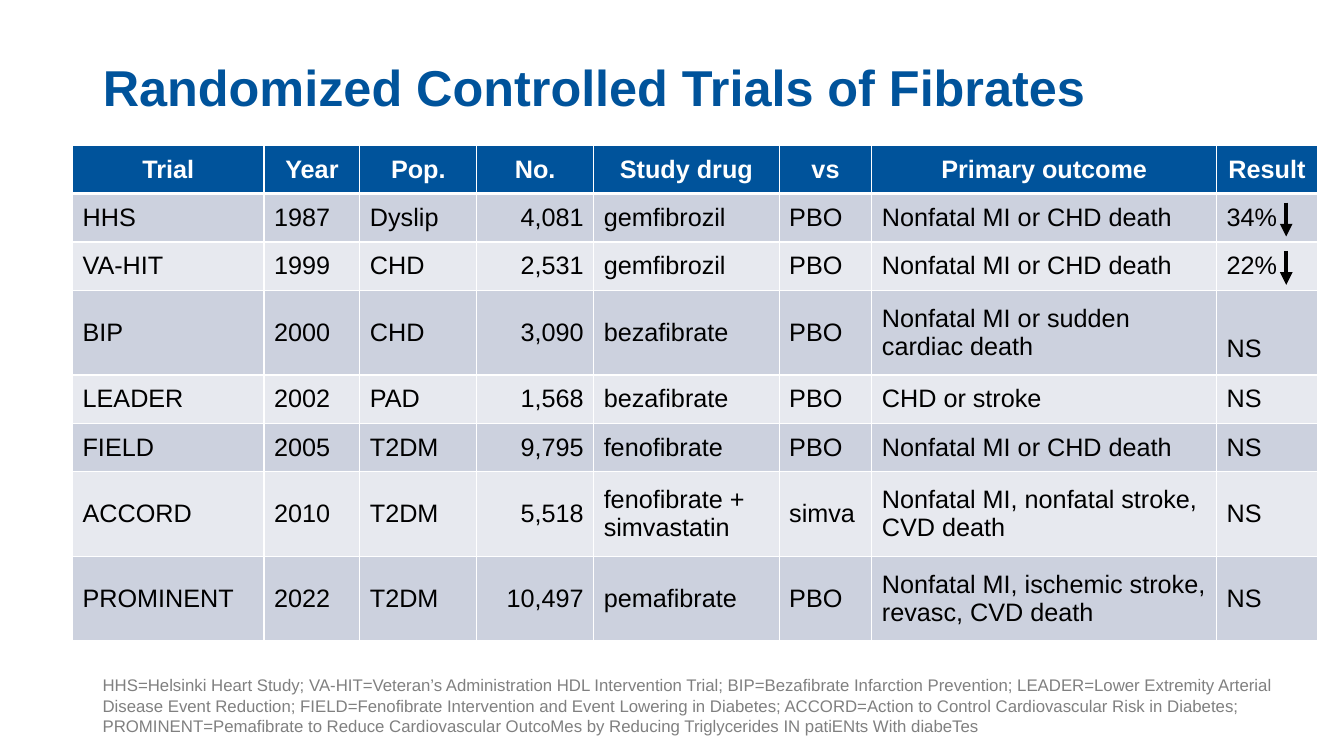
from lxml.etree import SubElement
from pptx import Presentation
from pptx.dml.color import RGBColor
from pptx.enum.shapes import MSO_CONNECTOR
from pptx.enum.text import MSO_ANCHOR, MSO_AUTO_SIZE, PP_ALIGN
from pptx.oxml.ns import qn
from pptx.util import Inches, Pt

COLORS = {
    "blue": "00539B",
    "white": "FFFFFF",
    "black": "000000",
    "grey": "808080",
    "dark band": "CCD1DE",
    "light band": "E7E9EF",
}
SLIDE_WIDTH, SLIDE_HEIGHT = 13.33, 7.5
COLUMN = SLIDE_WIDTH / 100
ROW = SLIDE_HEIGHT * 0.016

TEXT_LEFT = 6.9
TABLE_LEFT, TABLE_TOP = 5.4, 12
COLUMN_WIDTHS = [14.25, 7.13, 8.7, 8.7, 13.8, 6.9, 25.65, 7.5]
ROW_HEIGHTS = [4, 4, 4, 7, 4, 4, 7, 7]
NUMBER_COLUMN = 3
ARROW_LEFT = 95.7

HEADINGS = ["Trial", "Year", "Pop.", "No.", "Study drug", "vs", "Primary outcome", "Result"]
TRIALS = [
    ["HHS", "1987", "Dyslip", "4,081", "gemfibrozil", "PBO", "Nonfatal MI or CHD death", "34%"],
    ["VA-HIT", "1999", "CHD", "2,531", "gemfibrozil", "PBO", "Nonfatal MI or CHD death", "22%"],
    ["BIP", "2000", "CHD", "3,090", "bezafibrate", "PBO",
     "Nonfatal MI or sudden cardiac death", "NS"],
    ["LEADER", "2002", "PAD", "1,568", "bezafibrate", "PBO", "CHD or stroke", "NS"],
    ["FIELD", "2005", "T2DM", "9,795", "fenofibrate", "PBO", "Nonfatal MI or CHD death", "NS"],
    ["ACCORD", "2010", "T2DM", "5,518", "fenofibrate + simvastatin", "simva",
     "Nonfatal MI, nonfatal stroke, CVD death", "NS"],
    ["PROMINENT", "2022", "T2DM", "10,497", "pemafibrate", "PBO",
     "Nonfatal MI, ischemic stroke, revasc, CVD death", "NS"],
]
ABBREVIATIONS = (
    "HHS=Helsinki Heart Study; VA-HIT=Veteran’s Administration HDL Intervention Trial; "
    "BIP=Bezafibrate Infarction Prevention; LEADER=Lower Extremity Arterial Disease Event "
    "Reduction; FIELD=Fenofibrate Intervention and Event Lowering in Diabetes; "
    "ACCORD=Action to Control Cardiovascular Risk in Diabetes; PROMINENT=Pemafibrate to "
    "Reduce Cardiovascular OutcoMes by Reducing Triglycerides IN patiENts With diabeTes"
)


def across(columns):
    return Inches(columns * COLUMN)


def down(rows):
    return Inches(rows * ROW)


def color(name):
    return RGBColor.from_string(COLORS[name])


def write(frame, text, size, color_name, bold=False, align=PP_ALIGN.LEFT):
    frame.text = text
    para = frame.paragraphs[0]
    para.alignment = align
    para.font.name = "Arial"
    para.font.size = Pt(size)
    para.font.bold = bold
    para.font.color.rgb = color(color_name)
    return para


def anchor_at_bottom(frame):
    frame.word_wrap = True
    frame.auto_size = MSO_AUTO_SIZE.NONE
    frame.vertical_anchor = MSO_ANCHOR.BOTTOM


def add_title(page, text):
    title = page.shapes.title
    title.left, title.top = across(TEXT_LEFT), down(0)
    title.width, title.height = across(86.25), down(10.1)
    anchor_at_bottom(title.text_frame)
    para = write(title.text_frame, text, 36, "blue", bold=True)
    para.line_spacing = 0.9


def add_footnote(page, text):
    box = page.shapes.add_textbox(across(TEXT_LEFT), down(55.4), across(91.9), down(5.83))
    anchor_at_bottom(box.text_frame)
    write(box.text_frame, text, 12, "grey")


def set_borders(cell, bottom_width):
    properties = cell._tc.get_or_add_tcPr()
    for side, width in (("lnL", 1), ("lnR", 1), ("lnT", 1), ("lnB", bottom_width)):
        line = SubElement(properties, qn(f"a:{side}"), w=str(Pt(width)))
        fill = SubElement(line, qn("a:solidFill"))
        SubElement(fill, qn("a:srgbClr"), val=COLORS["white"])


def fill_cell(cell, text, fill_name, color_name, bold, align, bottom_width):
    set_borders(cell, bottom_width)
    cell.fill.solid()
    cell.fill.fore_color.rgb = color(fill_name)
    cell.vertical_anchor = MSO_ANCHOR.MIDDLE
    write(cell.text_frame, text, 18, color_name, bold, align)


def add_trial_table(page):
    frame = page.shapes.add_table(
        len(ROW_HEIGHTS), len(COLUMN_WIDTHS), across(TABLE_LEFT), down(TABLE_TOP),
        across(sum(COLUMN_WIDTHS)), down(sum(ROW_HEIGHTS)))
    table = frame.table
    for column, width in zip(table.columns, COLUMN_WIDTHS):
        column.width = across(width)
    for row, height in zip(table.rows, ROW_HEIGHTS):
        row.height = down(height)

    for index, heading in enumerate(HEADINGS):
        fill_cell(table.cell(0, index), heading, "blue", "white", True, PP_ALIGN.CENTER, 3)
    for number, trial in enumerate(TRIALS, start=1):
        band = "dark band" if number % 2 else "light band"
        for index, text in enumerate(trial):
            align = PP_ALIGN.RIGHT if index == NUMBER_COLUMN else PP_ALIGN.LEFT
            fill_cell(table.cell(number, index), text, band, "black", False, align, 1)

    bip_result = table.cell(3, len(HEADINGS) - 1)
    bip_result.vertical_anchor = MSO_ANCHOR.BOTTOM
    bip_result.margin_bottom = down(1)


def add_decrease_arrow(page, table_row):
    """Draw a downward arrow beside the result in the given table row."""
    top = TABLE_TOP + sum(ROW_HEIGHTS[:table_row]) + 0.75
    arrow = page.shapes.add_connector(
        MSO_CONNECTOR.STRAIGHT, across(ARROW_LEFT), down(top), across(ARROW_LEFT), down(top + 2.8))
    arrow.line.width = Pt(3)
    arrow.line.color.rgb = color("black")
    SubElement(arrow.line._get_or_add_ln(), qn("a:tailEnd"), type="triangle")
    SubElement(arrow._element.spPr, qn("a:effectLst"))


def main():
    deck = Presentation()
    deck.slide_width, deck.slide_height = Inches(SLIDE_WIDTH), Inches(SLIDE_HEIGHT)
    page = deck.slides.add_slide(deck.slide_layouts.get_by_name("Title Only"))
    add_title(page, "Randomized Controlled Trials of Fibrates")
    add_trial_table(page)
    for table_row in (1, 2):
        add_decrease_arrow(page, table_row)
    add_footnote(page, ABBREVIATIONS)
    deck.save("out.pptx")


if __name__ == "__main__":
    main()
